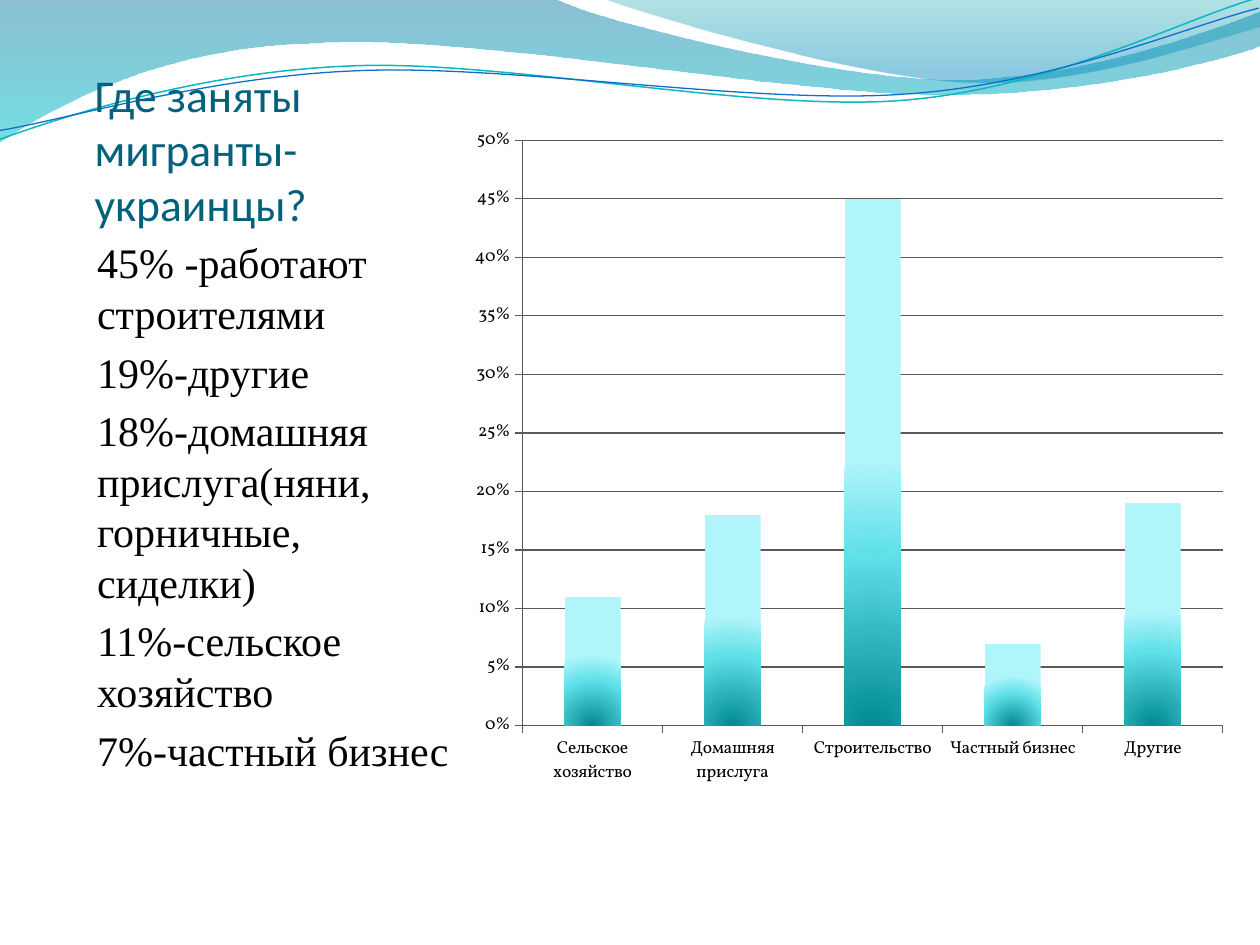
from lxml.etree import SubElement
from pptx import Presentation
from pptx.chart.data import CategoryChartData
from pptx.dml.color import RGBColor
from pptx.enum.chart import XL_CHART_TYPE, XL_TICK_MARK
from pptx.enum.text import MSO_ANCHOR, MSO_AUTO_SIZE, PP_ALIGN
from pptx.oxml import parse_xml
from pptx.oxml.ns import nsdecls, qn
from pptx.util import Inches, Pt

COLORS = {
    "title": "04617B", "text": "000000", "grid": "595959",
    "teal_line": "0AB8BF", "blue_line": "0F6FC6",
}
TITLE = "Где заняты мигранты-украинцы?"
FACTS = [
    "45% -работают строителями",
    "19%-другие",
    "18%-домашняя прислуга(няни, горничные, сиделки)",
    "11%-сельское хозяйство",
    "7%-частный бизнес",
]
SHARES = {
    "Сельское хозяйство": 0.11,
    "Домашняя прислуга": 0.18,
    "Строительство": 0.45,
    "Частный бизнес": 0.07,
    "Другие": 0.19,
}
PLOT = {"x": 0.065, "y": 0.051, "w": 0.888, "h": 0.866}

# Outlines in inches: a pair is a straight step, six numbers are a Bezier curve.
# Gradient stops: position %, colour, opacity %.
WAVES = [
    ([(0, 0), (4.4, -0.01), (4.76, 0.17, 6.64, 0.63, 7.58, 0.63),
      (8.53, 0.63, 9.58, 0.26, 10, 0.09), (10.01, 0.36),
      (9.83, 0.44, 8.7, 0.76, 7.46, 0.75), (6.22, 0.75, 3.82, 0.28, 2.57, 0.34),
      (1.29, 0.36, 0.46, 0.83, -0.01, 1.13), (0, 0)],
     [(0, "0074A1", 45), (100, "00C6CF", 55)]),
    ([(4.79, -0.01), (5.09, 0.11, 6.82, 0.62, 7.69, 0.65),
      (8.56, 0.69, 9.61, 0.32, 10, 0.21), (10, 0), (4.79, -0.01)],
     [(0, "00A1A9", 30), (80, "008BBF", 45)]),
]
STRANDS = [
    ([(-0.02, 0.87), (0.47, 0.72, 1.58, 0.41, 2.78, 0.42),
      (3.96, 0.42, 5.91, 0.93, 7.12, 0.9), (8.32, 0.87, 9.4, 0.36, 10, 0.22)],
     "teal_line", 0.85),
    ([(-0.02, 0.8), (0.46, 0.75, 1.64, 0.45, 2.83, 0.46),
      (4.03, 0.46, 5.96, 0.88, 7.16, 0.85), (8.35, 0.83, 9.42, 0.42, 10.01, 0.3)],
     "blue_line", 0.75),
]
STRAND_TILT = 357.3
BAR_STOPS = [(0, "008A92", 100), (65, "60E0E8", 100), (100, "B0F5FA", 100)]
DOWNWARD = '<a:lin ang="5400000" scaled="0"/>'
FROM_BOTTOM = ('<a:path path="circle"><a:fillToRect l="50000" t="100000" '
               'r="50000" b="0"/></a:path>')


def color(name):
    return RGBColor.from_string(COLORS[name])


def add_outline(page, outline, close):
    """Draw all points as straight steps, then join each curve's three into one."""
    points = [(Inches(x), Inches(y)) for step in outline
              for x, y in zip(step[::2], step[1::2])]
    builder = page.shapes.build_freeform(*points[0])
    builder.add_line_segments(points[1:], close=close)
    shape = builder.convert_to_shape()
    shape.shadow.inherit = False
    segments = iter(list(shape._element.iter(qn("a:lnTo"))))
    for step in outline[1:]:
        first = next(segments)
        if len(step) == 6:
            first.tag = qn("a:cubicBezTo")
            for _ in range(2):
                following = next(segments)
                first.append(following[0])
                following.getparent().remove(following)
    return shape


def set_gradient(fill, properties, stops, direction):
    fill.solid()
    listed = "".join(
        f'<a:gs pos="{pos * 1000}"><a:srgbClr val="{rgb}">'
        f'<a:alpha val="{opacity * 1000}"/></a:srgbClr></a:gs>'
        for pos, rgb, opacity in stops)
    gradient = parse_xml(f'<a:gradFill {nsdecls("a")} rotWithShape="1">'
                         f'<a:gsLst>{listed}</a:gsLst>{direction}</a:gradFill>')
    properties.replace(properties.find(qn("a:solidFill")), gradient)


def add_background(page):
    for outline, stops in WAVES:
        wave = add_outline(page, outline, True)
        wave.line.fill.background()
        set_gradient(wave.fill, wave._element.spPr, stops, DOWNWARD)
    for outline, name, width in STRANDS:
        strand = add_outline(page, outline, False)
        strand.rotation = STRAND_TILT
        strand.fill.background()
        strand.line.color.rgb = color(name)
        strand.line.width = Pt(width)


def fill_placeholder(box, paragraphs, area, side_inset, anchor, font, size, color_name):
    box.left, box.top, box.width, box.height = map(Inches, area)
    frame = box.text_frame
    frame.text = "\n".join(paragraphs)
    frame.word_wrap = True
    frame.auto_size = MSO_AUTO_SIZE.NONE
    frame.vertical_anchor = anchor
    frame.margin_left = frame.margin_right = Inches(side_inset)
    frame.margin_top, frame.margin_bottom = Inches(0.05), Inches(0)
    for paragraph in frame.paragraphs:
        paragraph.alignment = PP_ALIGN.LEFT
        properties = paragraph._p.get_or_add_pPr()
        properties.set("marL", "0")
        properties.set("indent", "0")
        SubElement(properties, qn("a:buNone"))
        for span in paragraph.runs:
            span.font.name = font
            span.font.size = Pt(size)
            span.font.color.rgb = color(color_name)


def add_share_chart(page):
    data = CategoryChartData(number_format="0%")
    data.categories = list(SHARES)
    data.add_series("Series 1", list(SHARES.values()))
    chart = page.shapes.add_chart(
        XL_CHART_TYPE.COLUMN_CLUSTERED, Inches(3.74), Inches(0.84),
        Inches(6.26), Inches(5.39), data).chart
    chart.has_legend = False
    chart.has_title = False
    chart.font.name = "Vollkorn"
    chart.font.size = Pt(10)
    chart.font.color.rgb = color("text")

    values = chart.value_axis
    values.minimum_scale, values.maximum_scale, values.major_unit = 0, 0.5, 0.05
    values.tick_labels.number_format = "0%"
    values.tick_labels.number_format_is_linked = False
    values.has_major_gridlines = True
    for line in (values.major_gridlines.format.line, values.format.line,
                 chart.category_axis.format.line):
        line.color.rgb = color("grid")
        line.width = Pt(0.75)
    for axis in (values, chart.category_axis):
        axis.major_tick_mark = XL_TICK_MARK.OUTSIDE

    plot = chart.plots[0]
    plot.gap_width = 150
    plot.vary_by_categories = False
    bars = plot.series[0]
    set_gradient(bars.format.fill, bars._element.spPr, BAR_STOPS, FROM_BOTTOM)

    plot_area = chart._chartSpace.chart.plotArea
    for old in plot_area.findall(qn("c:layout")):
        plot_area.remove(old)
    modes = '<c:xMode val="edge"/><c:yMode val="edge"/>'
    sizes = "".join(f'<c:{key} val="{value}"/>' for key, value in PLOT.items())
    plot_area.insert(0, parse_xml(
        f'<c:layout {nsdecls("c")}><c:manualLayout><c:layoutTarget val="inner"/>'
        f'{modes}{sizes}</c:manualLayout></c:layout>'))


def main():
    deck = Presentation()
    deck.slide_width, deck.slide_height = Inches(10), Inches(7.5)
    page = deck.slides.add_slide(deck.slide_layouts[1])
    add_background(page)
    title, body = page.shapes.title, page.placeholders[1]
    for box in (title, body):
        page.shapes._spTree.append(box._element)
    fill_placeholder(title, [TITLE], (0.75, 0.56, 3, 1.27), 0,
                     MSO_ANCHOR.BOTTOM, "Calibri", 26, "title")
    fill_placeholder(body, FACTS, (0.75, 1.83, 3, 5), 0.02,
                     MSO_ANCHOR.TOP, "Times New Roman", 24, "text")
    add_share_chart(page)
    deck.save("out.pptx")


if __name__ == "__main__":
    main()
